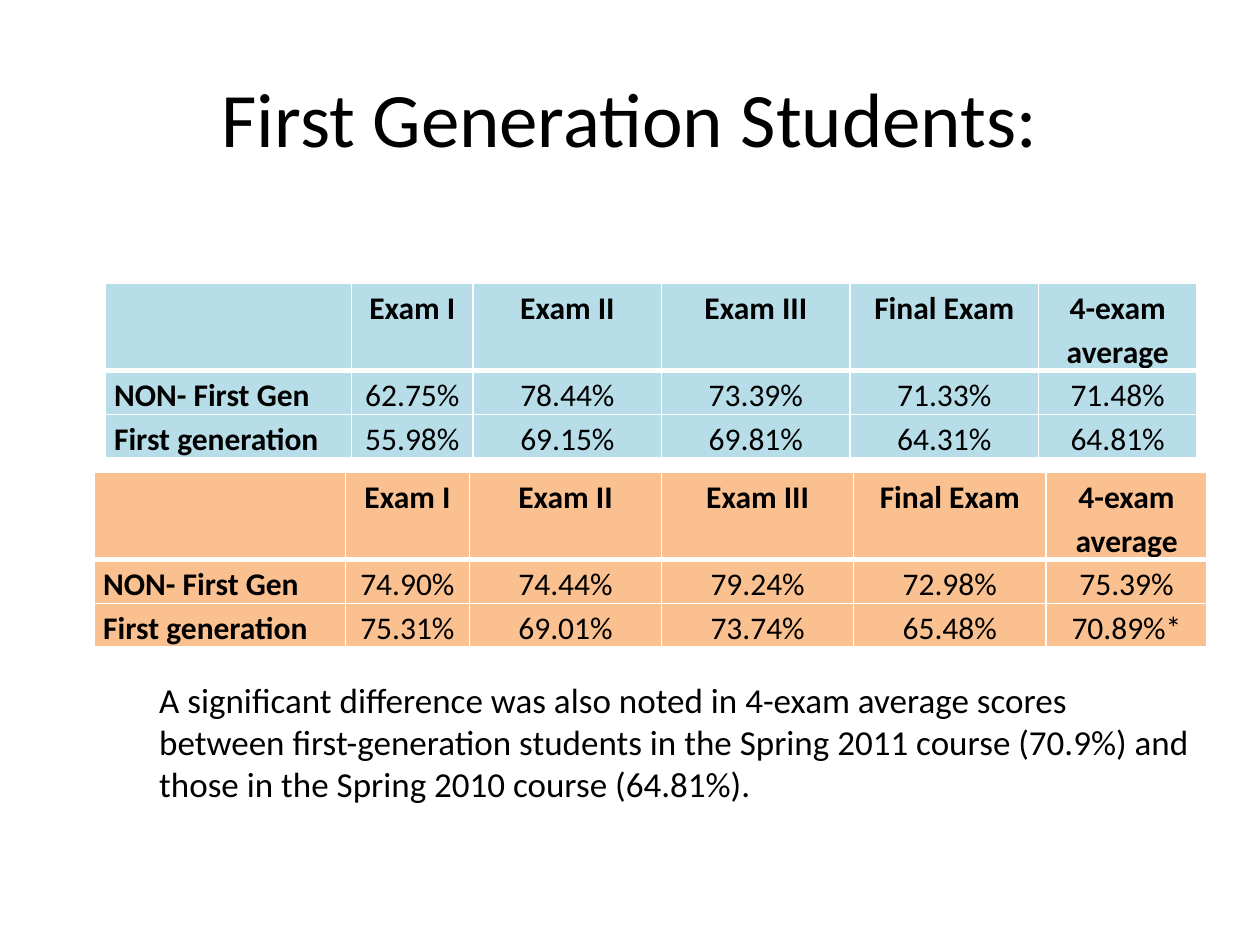
from pptx import Presentation
from pptx.dml.color import RGBColor as Rgb
from pptx.enum.text import MSO_ANCHOR as Anchor, PP_ALIGN as Align
from pptx.oxml import parse_xml
from pptx.oxml.ns import nsdecls
from pptx.util import Cm, Pt

FONT = "Calibri"
HEAD = ["", "Exam I", "Exam II", "Exam III", "Final Exam", "4-exam average"]
SPRING_10 = [
    HEAD,
    ["NON- First Gen", "62.75%", "78.44%", "73.39%", "71.33%", "71.48%"],
    ["First generation", "55.98%", "69.15%", "69.81%", "64.31%", "64.81%"],
]
SPRING_11 = [
    HEAD,
    ["NON- First Gen", "74.90%", "74.44%", "79.24%", "72.98%", "75.39%"],
    ["First generation", "75.31%", "69.01%", "73.74%", "65.48%", "70.89%*"],
]
NOTE = (
    "A significant difference was also noted in 4-exam average scores between "
    "first-generation students in the Spring 2011 course (70.9%) and those in "
    "the Spring 2010 course (64.81%)."
)
COLS = [4.98, 2.46, 3.81, 3.81, 3.81, 3.2]
ROWS = [1.73, 0.88, 0.88]


def color(code):
    return Rgb.from_string(code)


def write(frame, text, size=18, bold=False, align=Align.LEFT, line=None, after=None):
    para = frame.paragraphs[0]
    para.alignment = align
    para.line_spacing = line
    para.space_after = None if after is None else Pt(after)
    para.font.size = Pt(size)
    if text:
        run = para.add_run()
        run.text = text
        font = run.font
        font.name, font.size, font.bold = FONT, Pt(size), bold
        font.color.rgb = color("000000")


def add_edge(cell, side, width):
    cell._tc.get_or_add_tcPr().append(parse_xml(
        f'<a:ln{side} {nsdecls("a")} w="{Pt(width)}"><a:solidFill>'
        f'<a:srgbClr val="FFFFFF"/></a:solidFill></a:ln{side}>'
    ))


def fill_cell(cell, text, row, col, fill):
    cell.margin_left = cell.margin_right = Cm(0.18)
    cell.margin_top = cell.margin_bottom = 0
    widths = {"L": 1, "R": 1, "T": 3 if row == 1 else 1, "B": 3 if row == 0 else 1}
    for side, width in widths.items():
        add_edge(cell, side, width)
    cell.fill.solid()
    cell.fill.fore_color.rgb = color(fill)
    write(cell.text_frame, text, bold=row == 0 or col == 0,
          align=Align.CENTER if col else Align.LEFT, line=1.15, after=10)


def add_grid(slide, data, left, top, width, fill):
    shape = slide.shapes.add_table(
        len(data), len(HEAD), Cm(left), Cm(top), Cm(width), Cm(sum(ROWS)))
    grid = shape.table
    for col, size in zip(grid.columns, COLS):
        col.width = Cm(size * width / sum(COLS))
    for row, size in zip(grid.rows, ROWS):
        row.height = Cm(size)
    for r, row in enumerate(data):
        for c, text in enumerate(row):
            fill_cell(grid.cell(r, c), text, r, c, fill)


def add_title(slide, text):
    title = slide.shapes.title
    title.left, title.top = Cm(1.27), Cm(0.76)
    title.width, title.height = Cm(22.86), Cm(3.18)
    title.text_frame.vertical_anchor = Anchor.MIDDLE
    write(title.text_frame, text, size=44, align=Align.CENTER)


def add_note(slide, text):
    box = slide.shapes.add_textbox(Cm(2.96), Cm(13.55), Cm(21.38), Cm(2.82))
    box.text_frame.word_wrap = True
    write(box.text_frame, text, size=20)


def main():
    deck = Presentation()
    deck.slide_width, deck.slide_height = Cm(25.4), Cm(19.05)
    slide = deck.slides.add_slide(deck.slide_layouts[5])
    add_title(slide, "First Generation Students:")
    add_note(slide, NOTE)
    add_grid(slide, SPRING_10, 2.12, 5.72, 22.01, "B7DEE8")
    add_grid(slide, SPRING_11, 1.9, 9.53, 22.44, "FAC090")
    deck.save("out.pptx")


if __name__ == "__main__":
    main()
